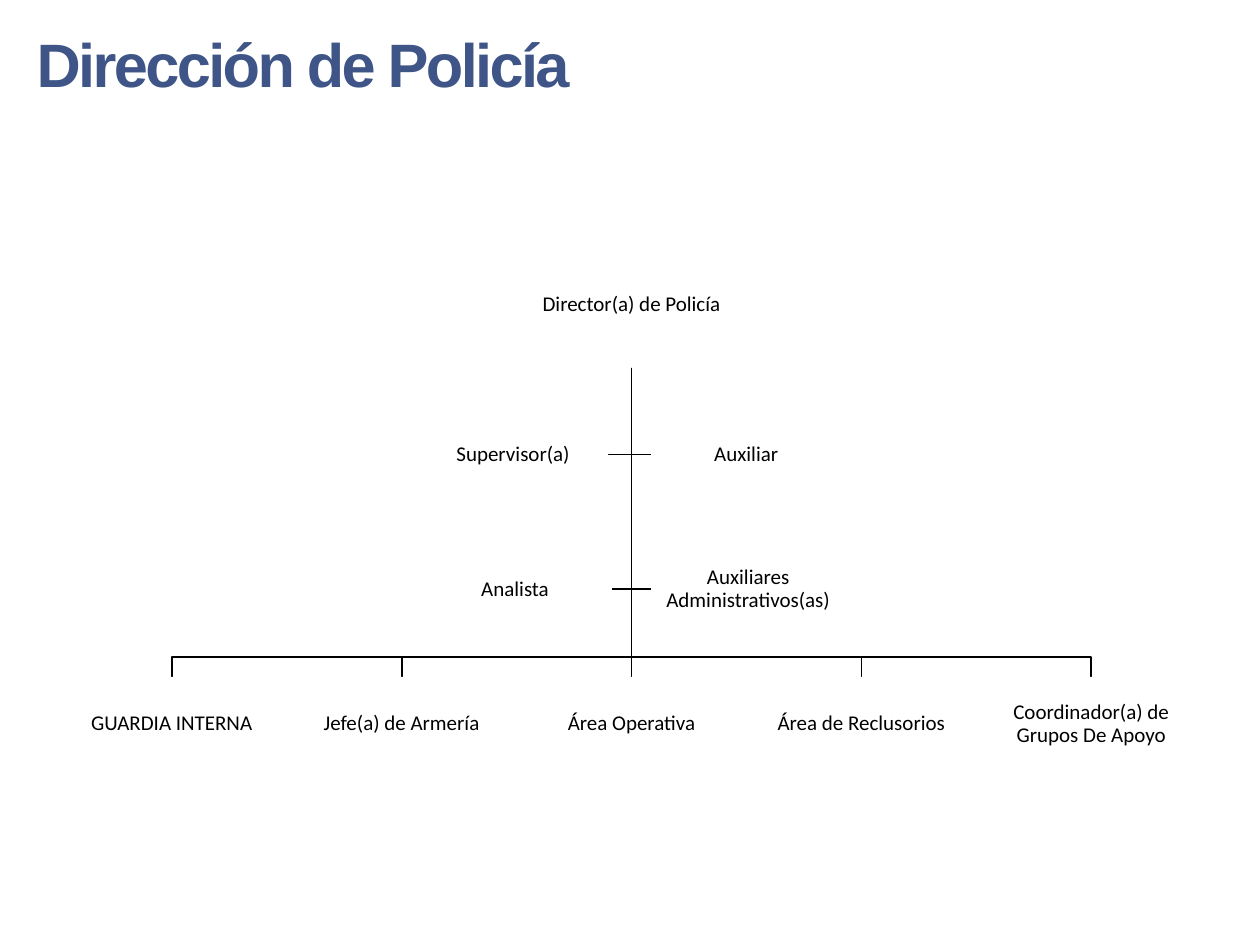
from pptx import Presentation
from pptx.dml.color import RGBColor as Rgb
from pptx.enum.shapes import MSO_CONNECTOR as Conn, MSO_SHAPE as Kind
from pptx.enum.text import MSO_ANCHOR as Anchor, MSO_AUTO_SIZE as Auto, PP_ALIGN as Align
from pptx.oxml.ns import qn
from pptx.util import Pt
from lxml.etree import SubElement

BLACK = Rgb(0x00, 0x00, 0x00)
WHITE = Rgb(0xFF, 0xFF, 0xFF)
NAVY = Rgb(0x3F, 0x55, 0x88)

MID, TOP, BUS, ROW = 360.9, 210.2, 375.6, 386.8
WIDE, HIGH, STEP = 108.5, 54, 131.35
EDGE = 0.75
STAFF = [
    (239, 232.7, 108.5, "Supervisor(a)"),
    (372.2, 232.7, 108.5, "Auxiliar"),
    (239, 309.7, 110.7, "Analista"),
    (372.2, 309.7, 110.7, "Auxiliares Administrativos(as)"),
]
AREAS = [
    "GUARDIA INTERNA",
    "Jefe(a) de Armería",
    "Área Operativa",
    "Área de Reclusorios",
    "Coordinador(a) de Grupos De Apoyo",
]
HEAD = {"size": Pt(35), "name": "Arial", "bold": True}
BODY = {"size": Pt(12), "name": "Calibri", "bold": False}
FRAME = {
    "word_wrap": True,
    "vertical_anchor": Anchor.MIDDLE,
    "margin_left": Pt(EDGE),
    "margin_right": Pt(EDGE),
    "margin_top": Pt(EDGE),
    "margin_bottom": Pt(EDGE),
}


def put(obj, vals):
    """Set each named value on an object."""
    for key, val in vals.items():
        setattr(obj, key, val)


def ink(line):
    """Give a line its black one-point stroke."""
    line.color.rgb = BLACK
    line.width = Pt(1)


def add_title(slide, text):
    """Fill and place the slide title."""
    shape = slide.shapes.title
    put(shape, {"left": Pt(13.7), "top": Pt(11.5), "width": Pt(537), "height": Pt(49.7)})
    frame = shape.text_frame
    put(frame, {"text": text, "word_wrap": True, "auto_size": Auto.SHAPE_TO_FIT_TEXT,
                "vertical_anchor": Anchor.TOP})
    para = frame.paragraphs[0]
    para.alignment = Align.LEFT
    font = para.runs[0].font
    put(font, HEAD)
    font.color.rgb = NAVY
    para.runs[0]._r.get_or_add_rPr().set("spc", "-150")


def add_box(slide, x, y, w, h, text):
    """Add a white box with a centred role name."""
    shape = slide.shapes.add_shape(Kind.RECTANGLE, Pt(x), Pt(y), Pt(w), Pt(h))
    shape.shadow.inherit = False
    shape.fill.solid()
    shape.fill.fore_color.rgb = WHITE
    shape.line.fill.background()
    put(shape.text_frame, {**FRAME, "text": text})
    para = shape.text_frame.paragraphs[0]
    put(para, {"alignment": Align.CENTER, "line_spacing": 0.9})
    font = para.runs[0].font
    put(font, BODY)
    font.color.rgb = BLACK


def add_bend(slide, *spots):
    """Draw an open bent line from the director through the spots."""
    build = slide.shapes.build_freeform(Pt(MID), Pt(TOP))
    build.add_line_segments([(Pt(x), Pt(y)) for x, y in spots], close=False)
    shape = build.convert_to_shape()
    shape.shadow.inherit = False
    shape.fill.background()
    ink(shape.line)


def add_stem(slide):
    """Draw the straight line down to the middle area."""
    line = slide.shapes.add_connector(Conn.STRAIGHT, Pt(MID), Pt(TOP), Pt(MID), Pt(ROW))
    ink(line.line)
    SubElement(line._element.spPr, qn("a:effectLst"))


def add_staff(slide):
    """Add the support roles on both sides of the stem."""
    for x, y, w, text in STAFF:
        near = x + w if x < MID else x
        mid = y + HIGH / 2
        add_bend(slide, (MID, mid), (near, mid))
        add_box(slide, x, y, w, HIGH, text)


def add_areas(slide):
    """Add the bottom row of areas and their lines."""
    for i, text in enumerate(AREAS):
        x = MID + (i - len(AREAS) // 2) * STEP
        if x == MID:
            add_stem(slide)
        else:
            add_bend(slide, (MID, BUS), (x, BUS), (x, ROW))
        add_box(slide, x - WIDE / 2, ROW, WIDE, HIGH, text)


def main():
    """Build the chart slide and save it."""
    deck = Presentation()
    put(deck, {"slide_width": Pt(720), "slide_height": Pt(540)})
    slide = deck.slides.add_slide(deck.slide_layouts[5])
    add_title(slide, "Dirección de Policía")
    add_box(slide, MID - 97.5, TOP - 72, 195, 72, "Director(a) de Policía")
    add_staff(slide)
    add_areas(slide)
    deck.save("out.pptx")


if __name__ == "__main__":
    main()
